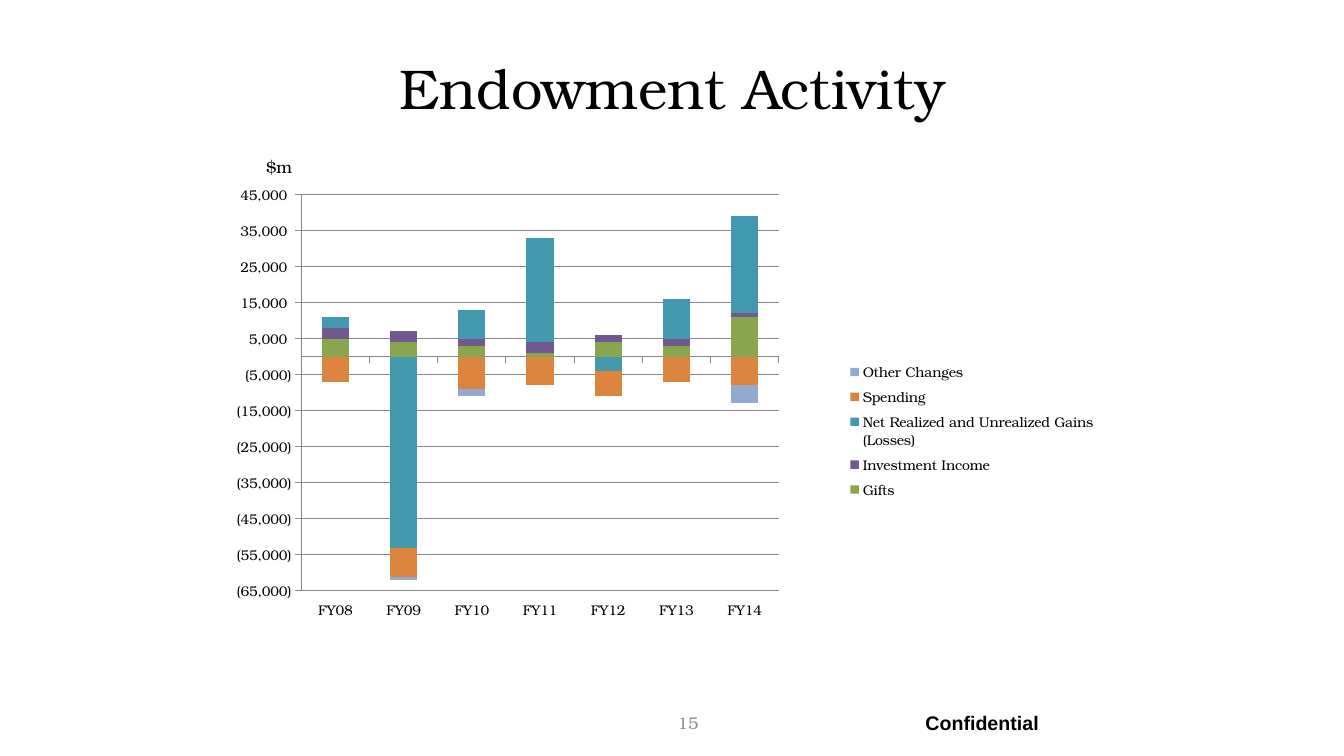
from lxml import etree
from pptx import Presentation
from pptx.chart.data import CategoryChartData
from pptx.dml.color import RGBColor
from pptx.enum.chart import XL_CHART_TYPE, XL_LEGEND_POSITION, XL_TICK_LABEL_POSITION, XL_TICK_MARK
from pptx.enum.text import MSO_ANCHOR, PP_ALIGN
from pptx.oxml.ns import qn
from pptx.util import Inches, Pt

SERIF = "TeX Gyre Bonum"
COLORS = {
    "text": "000000",
    "number": "8C8C8C",
    "grid": "878787",
    "Gifts": "89A54E",
    "Investment Income": "71588F",
    "Net Realized and Unrealized Gains (Losses)": "4198AF",
    "Spending": "DB843D",
    "Other Changes": "93A9CF",
}
YEARS = [f"FY{year:02}" for year in range(8, 15)]
ACTIVITY = {
    "Gifts": [5000, 4000, 3000, 1000, 4000, 3000, 11000],
    "Investment Income": [3000, 3000, 2000, 3000, 2000, 2000, 1000],
    "Net Realized and Unrealized Gains (Losses)": [3000, -53000, 8000, 29000, -4000, 11000, 27000],
    "Spending": [-7000, -8000, -9000, -8000, -7000, -7000, -8000],
    "Other Changes": [0, -1000, -2000, 0, 0, 0, -5000],
}


def write(sp, text, size, name=SERIF, color="text", bold=False, align=PP_ALIGN.LEFT, anchor=MSO_ANCHOR.TOP):
    tf = sp.text_frame
    tf.word_wrap = True
    tf.vertical_anchor = anchor
    p = tf.paragraphs[0]
    p.text = text
    p.alignment = align
    p.font.size, p.font.name, p.font.bold = Pt(size), name, bold
    p.font.color.rgb = RGBColor.from_string(COLORS[color])


def set_layout(parent, target, **fractions):
    """Place a chart part by fractions of the chart area."""
    layout = parent.find(qn("c:layout"))
    if layout is None:
        layout = etree.Element(qn("c:layout"))
        before = parent.find(qn("c:legendPos"))
        if before is None:
            parent.insert(0, layout)
        else:
            before.addnext(layout)
    manual = etree.SubElement(layout, qn("c:manualLayout"))
    settings = {"xMode": "edge", "yMode": "edge", **fractions}
    if target:
        settings = {"layoutTarget": target, **settings}
    for tag, value in settings.items():
        etree.SubElement(manual, qn(f"c:{tag}")).set("val", str(value))


prs = Presentation()
prs.slide_width, prs.slide_height = Inches(13.33), Inches(7.5)
s = prs.slides.add_slide(prs.slide_layouts[5])

# Title
title = s.shapes.title
title.left, title.top, title.width, title.height = map(Inches, (0.67, 0.24, 12, 1.25))
write(title, "Endowment Activity", 40, align=PP_ALIGN.CENTER, anchor=MSO_ANCHOR.MIDDLE)

# Stacked column chart
data = CategoryChartData()
data.categories = YEARS
for name, values in ACTIVITY.items():
    data.add_series(name, values)
chart = s.shapes.add_chart(XL_CHART_TYPE.COLUMN_STACKED, Inches(2.17), Inches(1.75), Inches(9), Inches(4.95), data).chart
chart.has_title = False
chart.font.size, chart.font.name = Pt(10), SERIF
chart.font.color.rgb = RGBColor.from_string(COLORS["text"])
plot = chart.plots[0]
plot.gap_width, plot.overlap, plot.vary_by_categories = 150, 100, False
for series in plot.series:
    series.invert_if_negative = False
    series.format.fill.solid()
    series.format.fill.fore_color.rgb = RGBColor.from_string(COLORS[series.name])

# Axes and gridlines
years, dollars = chart.category_axis, chart.value_axis
years.tick_label_position = XL_TICK_LABEL_POSITION.LOW
dollars.minimum_scale, dollars.maximum_scale, dollars.major_unit = -65000, 45000, 10000
dollars.tick_labels.number_format = r'_(* #,##0_);_(* \(#,##0\);_(* "-"??_);_('
dollars.tick_labels.number_format_is_linked = False
dollars.has_major_gridlines = True
for axis in (years, dollars):
    axis.major_tick_mark, axis.minor_tick_mark = XL_TICK_MARK.OUTSIDE, XL_TICK_MARK.NONE
for part in (years, dollars, dollars.major_gridlines):
    part.format.line.color.rgb = RGBColor.from_string(COLORS["grid"])
    part.format.line.width = Pt(0.75)

# Legend and plot area placement
chart.has_legend = True
legend = chart.legend
legend.position, legend.include_in_layout = XL_LEGEND_POSITION.RIGHT, False
chart_area = legend._element.getparent()
set_layout(chart_area.find(qn("c:plotArea")), "inner", x=0.091, y=0.036, w=0.526, h=0.795)
set_layout(legend._element, None, x=0.68, y=0.36, w=0.3, h=0.3)

# Slide number, confidentiality mark and unit label
for box, text, style in [
    ((5.27, 6.97, 3.11, 0.4), "15", dict(size=12, color="number", align=PP_ALIGN.CENTER, anchor=MSO_ANCHOR.MIDDLE)),
    ((9.08, 7, 2.58, 0.34), "Confidential", dict(size=14, name="Arial", bold=True)),
    ((2.54, 1.51, 0.49, 0.3), "$m", dict(size=12)),
]:
    write(s.shapes.add_textbox(*map(Inches, box)), text, **style)

prs.save("out.pptx")
